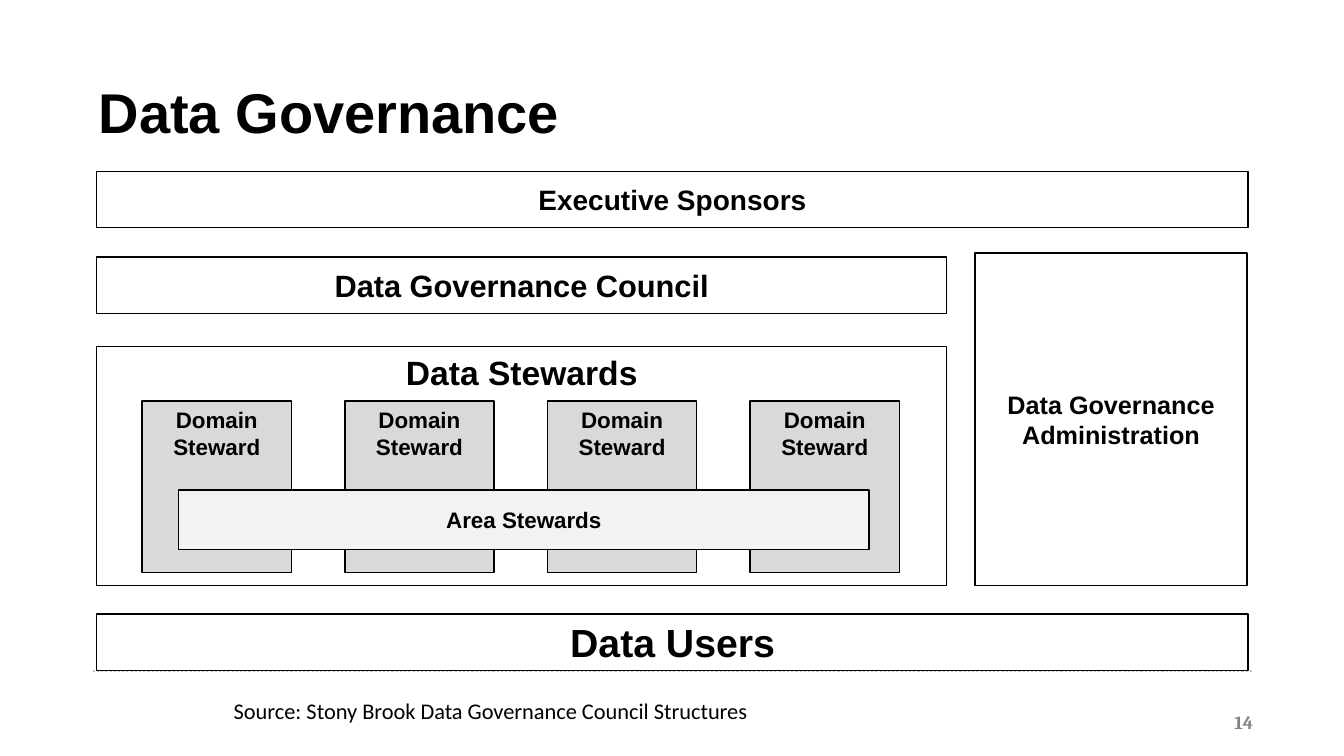
import pptx
import pptx.dml.color
import pptx.enum.dml
import pptx.enum.shapes
import pptx.enum.text
import pptx.oxml
import pptx.util
from pptx.util import Inches

ALIGN = pptx.enum.text.PP_ALIGN
ANCHOR = pptx.enum.text.MSO_ANCHOR
COLOURS = {
    "white": "FFFFFF",
    "black": "000000",
    "domain": "D9D9D9",
    "area": "F2F2F2",
    "rule": "C0C0C0",
    "number": "828383",
}


class GovernancePage:
    """Holds the style and the current slide, and adds each kind of element."""

    def __init__(self, deck):
        self.page = deck.slides.add_slide(deck.slide_layouts[5])
        self.shapes = self.page.shapes

    def colour(self, name):
        return pptx.dml.color.RGBColor.from_string(COLOURS[name])

    def set_text(self, shape, text, size, align, anchor, font="Arial", bold=True, colour="black"):
        frame = shape.text_frame
        frame.word_wrap = True
        frame.vertical_anchor = anchor
        frame.text = text
        para = frame.paragraphs[0]
        para.alignment = align
        para.font.name = font
        para.font.size = pptx.util.Pt(size)
        para.font.bold = bold
        para.font.color.rgb = self.colour(colour)
        return para

    def title(self, text, left, top, width, height):
        title = self.shapes.title
        title.left, title.top = Inches(left), Inches(top)
        title.width, title.height = Inches(width), Inches(height)
        para = self.set_text(title, text, 40, ALIGN.LEFT, ANCHOR.TOP)
        para.line_spacing = 0.8
        title.text_frame.auto_size = pptx.enum.text.MSO_AUTO_SIZE.NONE

    def box(self, text, size, left, top, width, height, fill="white", anchor=ANCHOR.MIDDLE):
        box = self.shapes.add_shape(
            pptx.enum.shapes.MSO_SHAPE.RECTANGLE,
            Inches(left), Inches(top), Inches(width), Inches(height))
        box.shadow.inherit = False
        box.fill.solid()
        box.fill.fore_color.rgb = self.colour(fill)
        box.line.color.rgb = self.colour("black")
        box.line.width = pptx.util.Pt(1)
        self.set_text(box, text, size, ALIGN.CENTER, anchor)

    def label(self, text, left, top, width, height, **style):
        label = self.shapes.add_textbox(
            Inches(left), Inches(top), Inches(width), Inches(height))
        self.set_text(label, text, **style)
        return label.text_frame

    def dotted_rule(self, left, right, top):
        rule = self.shapes.add_connector(
            pptx.enum.shapes.MSO_CONNECTOR.STRAIGHT,
            Inches(left), Inches(top), Inches(right), Inches(top))
        rule.line.color.rgb = self.colour("rule")
        rule.line.width = pptx.util.Pt(1.5)
        rule.line.dash_style = pptx.enum.dml.MSO_LINE.ROUND_DOT
        rule.element.spPr.append(pptx.oxml.parse_xml(
            '<a:effectLst xmlns:a="http://schemas.openxmlformats.org/drawingml/2006/main"/>'))


def main():
    deck = pptx.Presentation()
    deck.slide_width, deck.slide_height = Inches(13.33), Inches(7.5)
    page = GovernancePage(deck)

    page.dotted_rule(0.92, 12.42, 6.66)
    number = page.label("14", 9.56, 6.96, 3, 0.4, size=13.3, align=ALIGN.RIGHT,
                        anchor=ANCHOR.MIDDLE, font="Cambria", colour="number")
    number.margin_left = number.margin_right = Inches(0.13)
    number.margin_top = number.margin_bottom = Inches(0.07)
    page.title("Data Governance", 0.88, 0.85, 11.49, 0.77)

    left, full_width, main_width, bar_height = 0.96, 11.42, 8.43, 0.56
    page.box("Executive Sponsors", 20, left, 1.7, full_width, bar_height)
    page.box("Data Stewards", 24, left, 3.44, main_width, 2.37, anchor=ANCHOR.TOP)
    page.box("Data Governance Council", 22, left, 2.55, main_width, bar_height)
    page.box("Data Users", 28, left, 6.09, full_width, bar_height)
    page.box("Data Governance Administration", 18, 9.67, 2.51, 2.7, 3.3)
    for column in range(4):
        page.box("Domain\vSteward", 16, 1.41 + column * 2.01, 3.98, 1.48, 1.7,
                 "domain", ANCHOR.TOP)
    page.box("Area Stewards", 16, 1.77, 4.86, 6.85, 0.59, "area")

    source = page.label("Source: Stony Brook Data Governance Council Structures",
                        2.22, 6.87, 5.37, 0.37, size=16, align=ALIGN.LEFT,
                        anchor=ANCHOR.TOP, font="Calibri", bold=False)
    source.word_wrap = False
    source.auto_size = pptx.enum.text.MSO_AUTO_SIZE.SHAPE_TO_FIT_TEXT
    deck.save("out.pptx")


if __name__ == "__main__":
    main()
